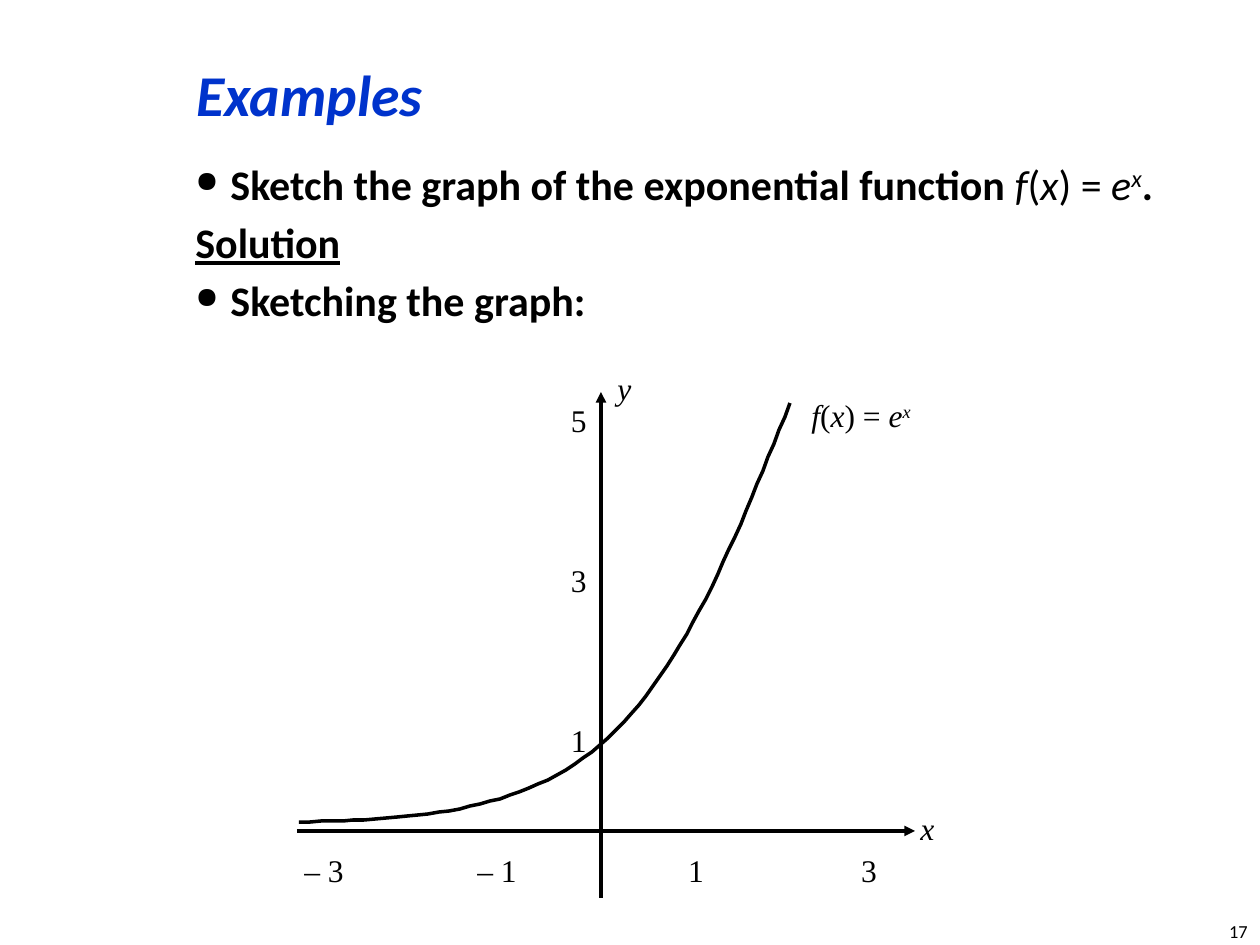
from pptx import Presentation
from pptx import util as u
from pptx.dml.color import RGBColor
from pptx.enum import shapes, text
from pptx.oxml.ns import qn
from lxml import etree

PX = u.Inches(1) / 126
INK = {"text": "000000", "title": "0033CC"}
SANS, SERIF = "Calibri", "Times New Roman"
LEFT, MID, RIGHT = (text.PP_ALIGN.LEFT, text.PP_ALIGN.CENTER,
                    text.PP_ALIGN.RIGHT)

# Runs are (text, style): b bold, i italic, u underline, ^ superscript
RULE = [("f", "i"), ("(", ""), ("x", "i"), (") = ", ""),
        ("e", "i"), ("x", "i^")]


def px(n):
    return u.Emu(round(n * PX))


def write(para, runs, size, face, ink="text"):
    for words, style in runs:
        run = para.add_run()
        run.text = words
        font = run.font
        font.size, font.name = u.Pt(size), face
        font.bold, font.italic = "b" in style, "i" in style
        font.underline = "u" in style
        font.color.rgb = RGBColor.from_string(INK[ink])
        if "^" in style:
            run._r.get_or_add_rPr().set("baseline", "30000")


def add_box(slide, x, y, w, h, anchor=text.MSO_ANCHOR.MIDDLE):
    frame = slide.shapes.add_textbox(px(x), px(y), px(w), px(h)).text_frame
    frame.word_wrap = True
    frame.vertical_anchor = anchor
    return frame


def add_label(slide, runs, x, mid, w, align=LEFT, size=18, face=SERIF):
    para = add_box(slide, x, mid - 25, w, 50).paragraphs[0]
    para.alignment = align
    write(para, runs, size, face)


def add_bullet(para):
    props = para._p.get_or_add_pPr()
    props.set("marL", str(px(35)))
    props.set("indent", str(-px(35)))
    etree.SubElement(props, qn("a:buSzPct"), val="70000")
    etree.SubElement(props, qn("a:buChar"), char="●")


def add_body(slide):
    lines = [
        ([("Sketch the graph of the exponential function ", "b"),
          *RULE, (".", "b")], True),
        ([("Solution", "bu")], False),
        ([("Sketching the graph:", "b")], True),
    ]
    frame = add_box(slide, 183, 152, 1014, 200, text.MSO_ANCHOR.TOP)
    for i, (runs, dot) in enumerate(lines):
        para = frame.add_paragraph() if i else frame.paragraphs[0]
        if i:
            para.space_before = u.Pt(4.5)
        if dot:
            add_bullet(para)
        write(para, runs, 24, SANS)


def ink_line(line):
    line.color.rgb = RGBColor.from_string(INK["text"])
    line.width = u.Pt(2)


def add_axis(slide, x1, y1, x2, y2):
    axis = slide.shapes.add_connector(
        shapes.MSO_CONNECTOR.STRAIGHT, px(x1), px(y1), px(x2), px(y2))
    ink_line(axis.line)
    etree.SubElement(axis.line._get_or_add_ln(), qn("a:tailEnd"),
                     type="triangle")
    etree.SubElement(axis._element.spPr, qn("a:effectLst"))


def bezier(knots, t):
    weights = (1 - t) ** 3, 3 * t * (1 - t) ** 2, 3 * t * t * (1 - t), t ** 3
    return tuple(sum(w * k[i] for w, k in zip(weights, knots))
                 for i in (0, 1))


def add_curve(slide, knots, steps=30):
    dots = [bezier(knots[i:i + 4], n / steps)
            for i in range(0, len(knots) - 1, 3)
            for n in range(1, steps + 1)]
    pen = slide.shapes.build_freeform(*knots[0], scale=PX)
    pen.add_line_segments(dots, close=False)
    curve = pen.convert_to_shape()
    curve.shadow.inherit = False
    curve.fill.background()
    ink_line(curve.line)


def add_graph(slide):
    # Axes and their names
    add_axis(slide, 601, 898, 601, 392)
    add_axis(slide, 297, 831, 915, 831)
    add_label(slide, [("x", "i")], 908, 828, 60)
    add_label(slide, [("y", "i")], 605, 388, 60)

    # Scale numbers
    for i, num in enumerate("531"):
        add_label(slide, [(num, "")], 539, 420 + 160 * i, 60, RIGHT)
    for num, mid in (("– 3", 324), ("– 1", 497), ("1", 696), ("3", 869)):
        add_label(slide, [(num, "")], mid - 40, 870, 80, MID)

    # Exponential curve and its rule
    add_curve(slide, [(299, 822), (408, 819), (518, 815), (600, 745),
                      (682, 675), (736, 539), (790, 403)])
    add_label(slide, RULE, 799, 415, 213)


def main():
    deck = Presentation()
    deck.slide_width, deck.slide_height = px(1260), px(945)
    slide = deck.slides.add_slide(deck.slide_layouts[6])

    # Title and body
    title = add_box(slide, 184, 0, 360, 186)
    write(title.paragraphs[0], [("Examples", "bi")], 33, SANS, "title")
    add_body(slide)

    add_graph(slide)

    # Slide number
    add_label(slide, [("17", "")], 998, 931, 262, RIGHT, 10.5, SANS)
    deck.save("out.pptx")


if __name__ == "__main__":
    main()
